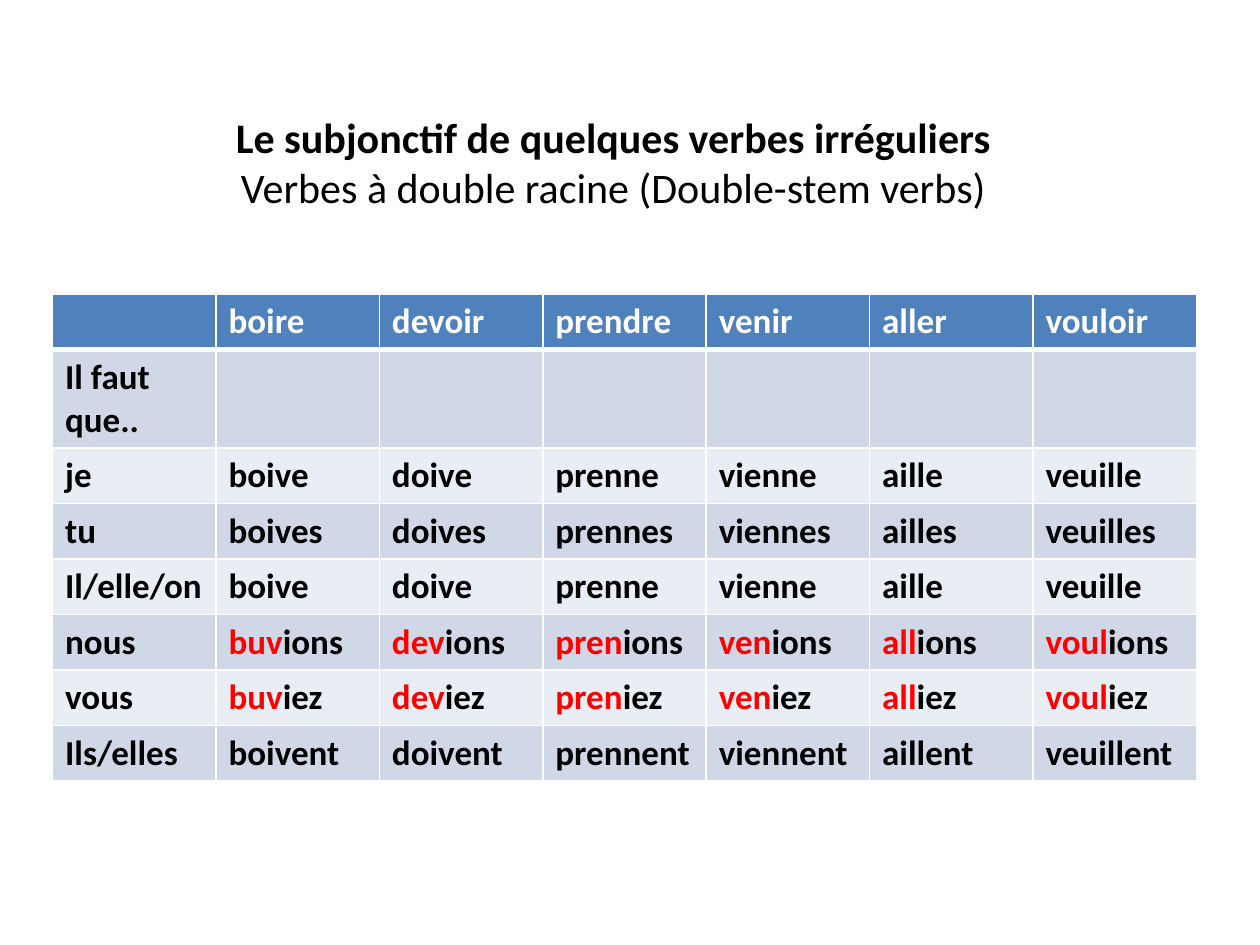
from lxml.etree import SubElement
from pptx import Presentation
from pptx.dml.color import RGBColor
from pptx.enum.text import PP_ALIGN
from pptx.oxml.ns import qn
from pptx.util import Cm, Pt

BLACK, WHITE, RED = "000000", "FFFFFF", "FF0000"
HEADER, BANDS = "4F81BD", ("D0D8E8", "E9EDF4")

# infinitive, main stem, stem for nous and vous
VERBS = [
    ("boire", "boiv", "buv"),
    ("devoir", "doiv", "dev"),
    ("prendre", "prenn", "pren"),
    ("venir", "vienn", "ven"),
    ("aller", "aill", "all"),
    ("vouloir", "veuill", "voul"),
]
# pronoun, ending, uses the second stem
PERSONS = [
    ("je", "e", False),
    ("tu", "es", False),
    ("Il/elle/on", "e", False),
    ("nous", "ions", True),
    ("vous", "iez", True),
    ("Ils/elles", "ent", False),
]


def rgb(value):
    return RGBColor.from_string(value)


def add_run(p, text, font="Calibri", size=20, color=BLACK, bold=True):
    r = p.add_run()
    r.text = text
    r.font.name = font
    r.font.size = Pt(size)
    r.font.bold = bold
    r.font.color.rgb = rgb(color)


def set_borders(cell, **widths):
    """Draw white cell borders; widths in points are keyed L, R, T, B."""
    tc_pr = cell._tc.get_or_add_tcPr()
    for index, side in enumerate("LRTB"):
        ln = SubElement(tc_pr, qn(f"a:ln{side}"), w=str(Pt(widths.get(side, 1))))
        fill = SubElement(ln, qn("a:solidFill"))
        SubElement(fill, qn("a:srgbClr"), val=WHITE)
        tc_pr.remove(ln)
        tc_pr.insert(index, ln)


def conjugate(verb, ending, second_stem):
    """Return the runs of one form, each as (text, color)."""
    _, main, second = verb
    if second_stem:
        return [(second, RED), (ending, BLACK)]
    return [(main + ending, BLACK)]


class Deck:
    def __init__(self, width, height):
        self.prs = Presentation()
        self.prs.slide_width, self.prs.slide_height = Cm(width), Cm(height)
        self.s = self.prs.slides.add_slide(self.prs.slide_layouts[6])

    def text(self, left, top, width, height, lines):
        """Add centred paragraphs, each given as (text, bold)."""
        sp = self.s.shapes.add_textbox(Cm(left), Cm(top), Cm(width), Cm(height))
        tf = sp.text_frame
        tf.word_wrap = True
        for i, (text, bold) in enumerate(lines):
            p = tf.add_paragraph() if i else tf.paragraphs[0]
            p.alignment = PP_ALIGN.CENTER
            add_run(p, text, size=24, bold=bold)

    def table(self, left, top, width, row_height, rows):
        """Add a banded table whose cells are lists of (text, color)."""
        n_rows, n_cols = len(rows), len(rows[0])
        table = self.s.shapes.add_table(
            n_rows, n_cols, Cm(left), Cm(top), Cm(width), Cm(row_height * n_rows)
        ).table
        for i, row in enumerate(rows):
            for j, runs in enumerate(row):
                cell = table.cell(i, j)
                cell.fill.solid()
                cell.fill.fore_color.rgb = rgb(BANDS[(i - 1) % 2] if i else HEADER)
                set_borders(cell, T=3 if i == 1 else 1, B=1 if i else 3)
                for text, color in runs:
                    add_run(cell.text_frame.paragraphs[0], text, color=color)


def main():
    deck = Deck(25.4, 19.05)
    rows = [[[]] + [[(verb[0], WHITE)] for verb in VERBS]]
    rows.append([[("Il faut que..", BLACK)]] + [[] for _ in VERBS])
    for pronoun, ending, second_stem in PERSONS:
        forms = [conjugate(verb, ending, second_stem) for verb in VERBS]
        rows.append([[(pronoun, BLACK)]] + forms)
    deck.table(1.06, 5.93, 23.06, 1.04, rows)
    deck.text(4.01, 2.12, 16.71, 4.37, [
        ("Le subjonctif de quelques verbes irréguliers", True),
        ("Verbes à double racine (Double-stem verbs)", False),
    ])
    deck.prs.save("out.pptx")


if __name__ == "__main__":
    main()
